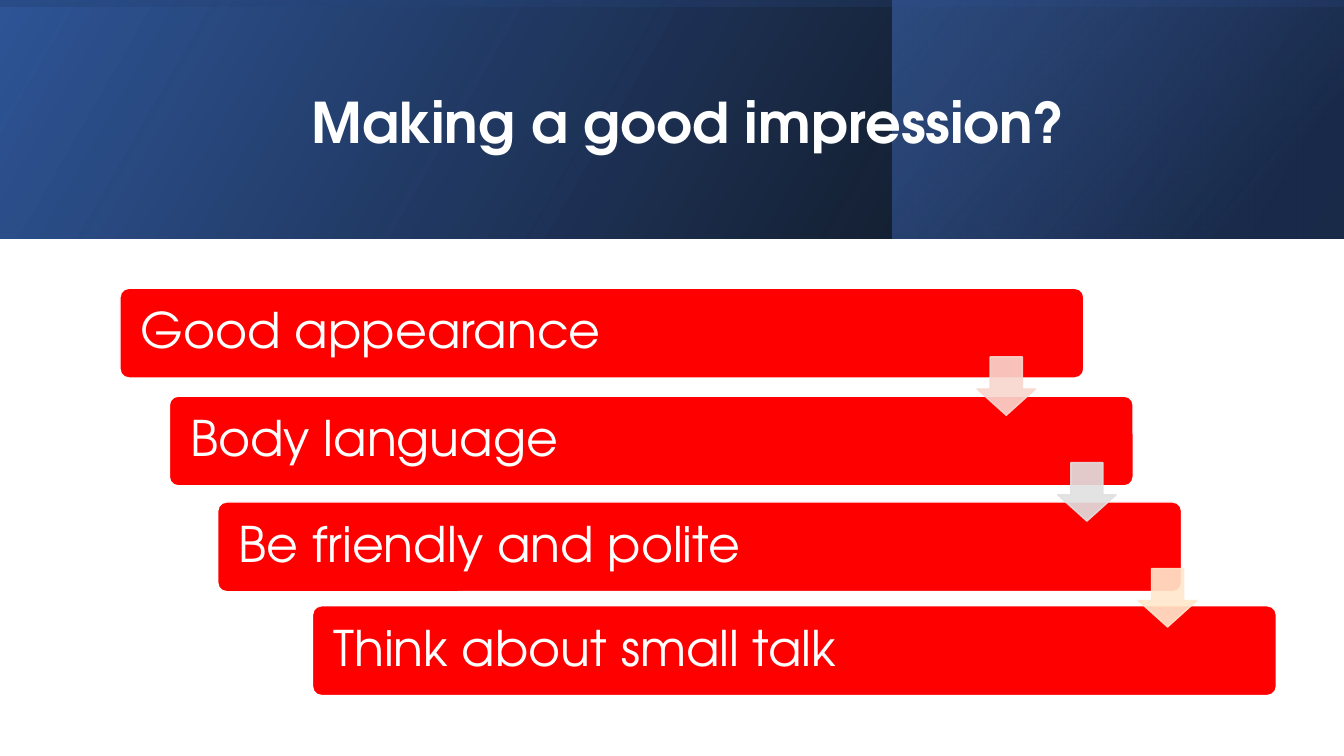
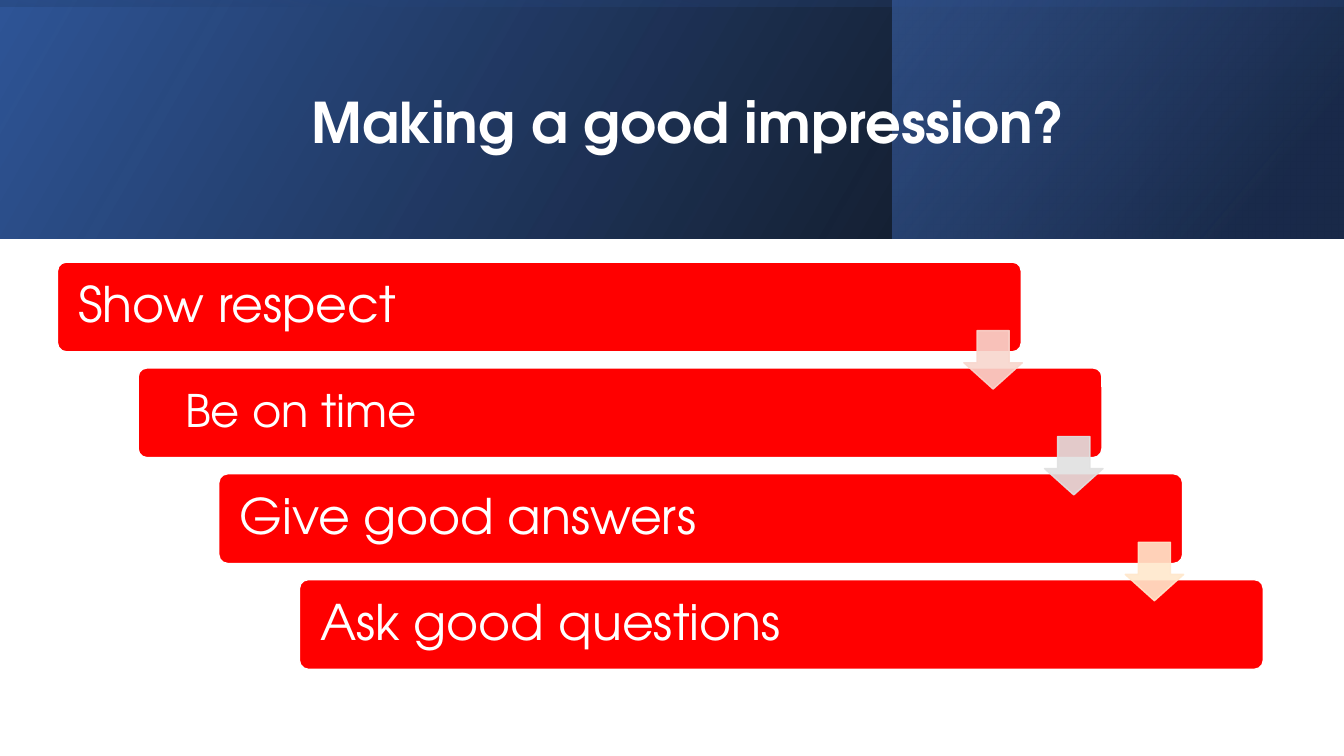
import pptx
import pptx.util
import pptx.oxml
import pptx.oxml.ns
import pptx.dml.color
import pptx.enum.shapes
import pptx.enum.text
from dataclasses import dataclass
from lxml import etree

Inches = pptx.util.Inches
Pt = pptx.util.Pt
Shape = pptx.enum.shapes.MSO_SHAPE
Anchor = pptx.enum.text.MSO_ANCHOR
Align = pptx.enum.text.PP_ALIGN
Fit = pptx.enum.text.MSO_AUTO_SIZE
qn = pptx.oxml.ns.qn


@dataclass(frozen=True)
class Theme:
    """Colours, font and type sizes of the deck."""
    font: str = "TeX Gyre Adventor"
    text: str = "FFFFFF"
    bar: str = "FF0000"
    edge: str = "FFFFFF"
    arrows: tuple = ("F8D7CE", "E1E1E1", "FFE8CC")
    black: str = "000000"
    deep: str = "2F5597"
    navy: str = "203864"
    sky: str = "4472C4"
    title: int = 40
    item: int = 35
    small: int = 32


@dataclass(frozen=True)
class Step:
    """One bar, with its shift from the even stair."""
    text: str
    dx: float = 0
    dy: float = 0
    pad: float = 0.18
    size: int = Theme.item


THEME = Theme()
WIDE, HIGH, BAND = 13.33, 7.5, 2.37
TITLE = "Making a good impression?"
BAR = (9.56, 0.89)
STEP = (0.8, 1.05)
ARROW = (8.99, 0.68, 0.58)

SLIDES = (
    ((0.7, 2.86), (
        Step("Good appearance", dx=0.49),
        Step("Body language", dx=0.18, dy=0.02),
        Step("Be friendly and polite", dx=-0.14, dy=0.02),
        Step("Think about small talk"),
    )),
    ((0.57, 2.6), (
        Step("Show respect"),
        Step("Be on time", pad=0.44, size=THEME.small),
        Step("Give good answers"),
        Step("Ask good questions"),
    )),
)


def rgb(code):
    """Turn a hex code into a colour."""
    return pptx.dml.color.RGBColor.from_string(code)


def apply(item, form):
    """Set each attribute named in a dict of format values."""
    for name, value in form.items():
        setattr(item, name, value)


def write(frame, text, size, bold=False, align=Align.LEFT, pad=0.1):
    """Put one styled line of text in a frame."""
    apply(frame, {"text": text, "word_wrap": True, "auto_size": Fit.NONE,
                  "vertical_anchor": Anchor.MIDDLE,
                  "margin_left": Inches(pad)})
    line = frame.paragraphs[0]
    apply(line, {"alignment": align, "line_spacing": 0.9})
    font = line.runs[0].font
    apply(font, {"name": THEME.font, "size": Pt(size), "bold": bold})
    font.color.rgb = rgb(THEME.text)


def draw(slide, kind, box, fill, edge):
    """Add a flat shape with a solid fill and a thin line."""
    shape = slide.shapes.add_shape(kind, *map(Inches, box))
    shape.shadow.inherit = False
    shape.fill.solid()
    shape.fill.fore_color.rgb = rgb(fill)
    shape.line.color.rgb = rgb(edge)
    shape.line.width = Pt(1)
    return shape


def fade(shape, stay):
    """Make the fill and line of a shape partly clear."""
    for color in shape._element.spPr.iter(qn("a:srgbClr")):
        etree.SubElement(color, qn("a:alpha"), val=str(stay * 1000))


def blend(shape, stops, angle):
    """Give a shape a linear gradient of (place, colour, opacity) stops."""
    marks = "".join(
        f'<a:gs pos="{place * 1000}"><a:srgbClr val="{code}">'
        f'<a:alpha val="{stay * 1000}"/></a:srgbClr></a:gs>'
        for place, code, stay in stops)
    grad = pptx.oxml.parse_xml(
        f'<a:gradFill {pptx.oxml.ns.nsdecls("a")} rotWithShape="1">'
        f'<a:gsLst>{marks}</a:gsLst>'
        f'<a:lin ang="{angle * 60000}" scaled="0"/></a:gradFill>')
    props = shape._element.spPr
    props.replace(props.find(qn("a:solidFill")), grad)


def band(slide, wide, high):
    """Layer the three gradient panels of the header."""
    side = 4.48
    mid = (wide - high) / 2
    panels = (
        ((0, 0, wide, high), 0, 330,
         ((0, THEME.black, 96), (100, THEME.deep, 100))),
        ((wide - side, 0, side, high), 0, 320,
         ((19, THEME.navy, 68), (100, THEME.sky, 48))),
        ((mid, -mid, high, wide), 270, 350,
         ((23, THEME.deep, 16), (99, THEME.black, 45))),
    )
    for box, turn, angle, stops in panels:
        panel = draw(slide, Shape.RECTANGLE, box, THEME.deep, THEME.deep)
        panel.line.fill.background()
        panel.rotation = turn
        panel._element.spPr.find(qn("a:xfrm")).set("flipH", "1")
        blend(panel, stops, angle)


def head(slide, text):
    """Draw the header band with the title on top."""
    band(slide, WIDE, BAND)
    title = slide.shapes.title
    apply(title, {"left": Inches(1.51), "top": Inches(0.38),
                  "width": Inches(10.63), "height": Inches(1.72)})
    write(title.text_frame, text, THEME.title, True, Align.CENTER)
    slide.shapes._spTree.append(title._element)


def stair(slide, left, top, steps):
    """Draw the bars stepping down from a corner, joined by arrows."""
    spots = [(left + i * STEP[0], top + i * STEP[1])
             for i in range(len(steps))]
    for (x, y), step in zip(spots, steps):
        box = (x + step.dx, y + step.dy, *BAR)
        bar = draw(slide, Shape.ROUNDED_RECTANGLE, box,
                   THEME.bar, THEME.edge)
        bar.adjustments[0] = 0.1
        write(bar.text_frame, step.text, step.size, pad=step.pad)
    dx, dy, size = ARROW
    for (x, y), color in zip(spots, THEME.arrows):
        arrow = draw(slide, Shape.DOWN_ARROW, (x + dx, y + dy, size, size),
                     color, color)
        arrow.adjustments[0] = 0.55
        arrow.adjustments[1] = 0.45
        fade(arrow, 90)


def main():
    """Build and save the deck."""
    deck = pptx.Presentation()
    apply(deck, {"slide_width": Inches(WIDE), "slide_height": Inches(HIGH)})
    for corner, steps in SLIDES:
        slide = deck.slides.add_slide(deck.slide_layouts[5])
        head(slide, TITLE)
        stair(slide, *corner, steps)
    deck.save("out.pptx")


if __name__ == "__main__":
    main()
